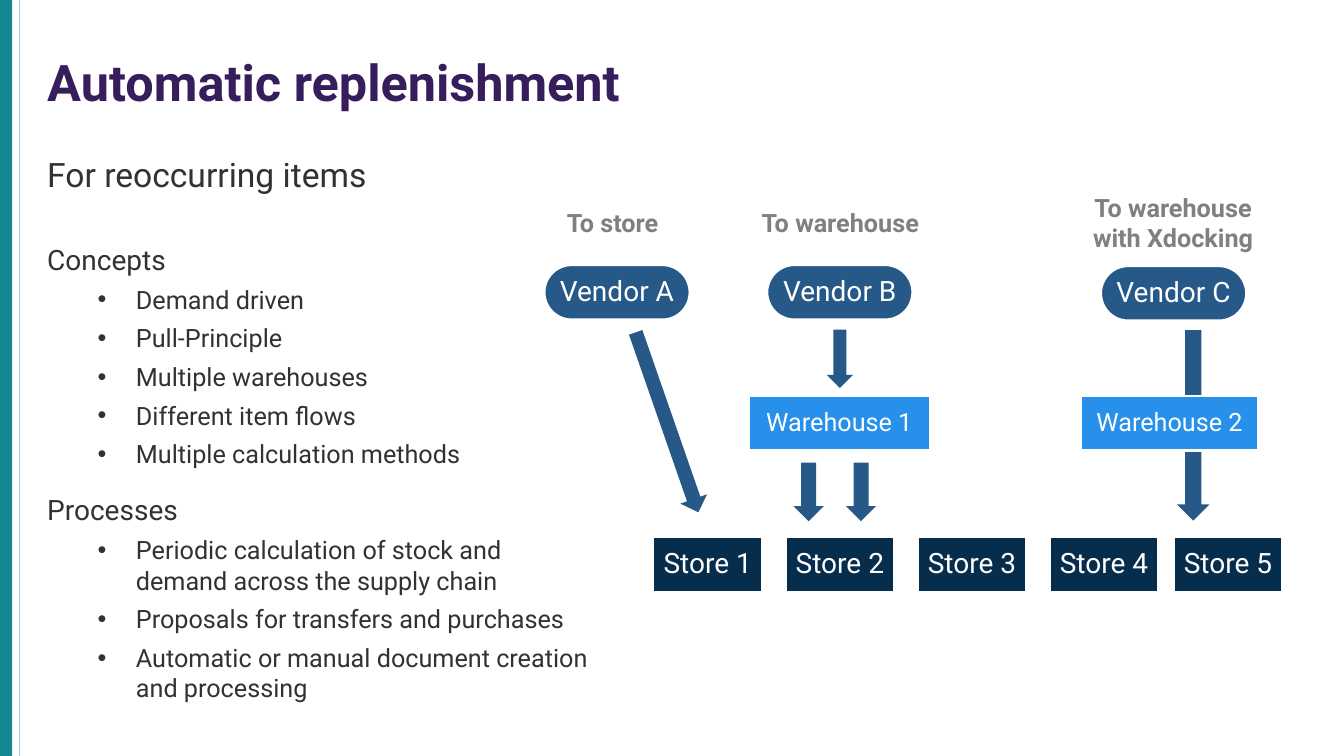
import pptx
import pptx.util
import pptx.dml.color
import pptx.enum.shapes
import pptx.enum.text
import lxml.etree

Inches = pptx.util.Inches
Pt = pptx.util.Pt
RGBColor = pptx.dml.color.RGBColor
SHAPE = pptx.enum.shapes.MSO_SHAPE
ALIGN = pptx.enum.text.PP_ALIGN
ANCHOR = pptx.enum.text.MSO_ANCHOR

FONT = "Roboto"
WHITE = RGBColor(0xFF, 0xFF, 0xFF)
TEAL = RGBColor(0x13, 0x88, 0x90)
PALE = RGBColor(0x8E, 0xD6, 0xE7)
PURPLE = RGBColor(0x36, 0x1D, 0x5C)
DARK = RGBColor(0x32, 0x31, 0x33)
GREY = RGBColor(0x80, 0x80, 0x80)
STEEL = RGBColor(0x26, 0x58, 0x88)
BLUE = RGBColor(0x26, 0x90, 0xEA)
NAVY = RGBColor(0x07, 0x2D, 0x4D)

TITLE = "Automatic replenishment"
INTRO = "For reoccurring items"
SECTIONS = [
    ("Concepts", ["Demand driven", "Pull-Principle", "Multiple warehouses",
                  "Different item flows", "Multiple calculation methods"]),
    ("Processes", ["Periodic calculation of stock and demand across the supply chain",
                   "Proposals for transfers and purchases",
                   "Automatic or manual document creation and processing"]),
]
LABELS = [
    (["To store"], 5.5, 2.01, 1.15, 0.4),
    (["To warehouse"], 7.42, 2.01, 1.83, 0.4),
    (["To warehouse", "with Xdocking"], 10.68, 1.86, 1.91, 0.71),
]
VENDORS = [("Vendor A", 5.4, 2.63), ("Vendor B", 7.61, 2.63), ("Vendor C", 10.92, 2.64)]
WAREHOUSES = [("Warehouse 1", 7.43, 1.79), ("Warehouse 2", 10.72, 1.76)]
STORE_LEFTS = [6.48, 7.79, 9.1, 10.41, 11.64]
CROSSDOCK_ARROW = (10.89, 4.06, 1.89, 0.32, 90)
ARROWS = [
    (5.67, 4.05, 1.89, 0.28, 70.8),
    (8.04, 3.43, 0.58, 0.26, 90),
    (7.73, 4.73, 0.58, 0.3, 90),
    (8.25, 4.73, 0.58, 0.3, 90),
]
BOX_H = 0.54

prs = pptx.Presentation()
prs.slide_width, prs.slide_height = Inches(13.33), Inches(7.5)
s = prs.slides.add_slide(prs.slide_layouts[6])


def add_run(p, text, size, color, bold=False):
    r = p.add_run()
    r.text = text
    r.font.name, r.font.size, r.font.bold = FONT, Pt(size), bold
    r.font.color.rgb = color


def add_shape(kind, x, y, w, h, fill, rotation=0):
    sp = s.shapes.add_shape(kind, Inches(x), Inches(y), Inches(w), Inches(h))
    sp.shadow.inherit = False
    sp.rotation = rotation
    sp.fill.solid()
    sp.fill.fore_color.rgb = fill
    sp.line.fill.background()
    return sp


def add_box(kind, text, x, y, w, fill, size):
    sp = add_shape(kind, x, y, w, BOX_H, fill)
    sp.line.color.rgb = WHITE
    sp.line.width = Pt(1.5)
    tf = sp.text_frame
    tf.word_wrap = True
    tf.vertical_anchor = ANCHOR.MIDDLE
    tf.margin_left = tf.margin_right = tf.margin_top = tf.margin_bottom = Inches(0.01)
    p = tf.paragraphs[0]
    p.alignment = ALIGN.CENTER
    p.line_spacing = 0.9
    add_run(p, text, size, WHITE)
    return sp


def add_text(x, y, w, h, wrap=True):
    tf = s.shapes.add_textbox(Inches(x), Inches(y), Inches(w), Inches(h)).text_frame
    tf.word_wrap = wrap
    return tf


def add_arrow(x, y, w, h, rotation):
    add_shape(SHAPE.RIGHT_ARROW, x, y, w, h, STEEL, rotation)


def make_bullet(p):
    pPr = p._p.get_or_add_pPr()
    pPr.set("marL", str(Inches(0.88)))
    pPr.set("indent", str(Inches(-0.38)))
    lxml.etree.SubElement(pPr, pptx.oxml.ns.qn("a:buFont"), typeface="Arial")
    lxml.etree.SubElement(pPr, pptx.oxml.ns.qn("a:buChar"), char="•")


add_shape(SHAPE.RECTANGLE, 0, 0, 0.12, 7.5, TEAL)
rule = s.shapes.add_connector(pptx.enum.shapes.MSO_CONNECTOR.STRAIGHT,
                              Inches(0.19), 0, Inches(0.19), Inches(7.5))
rule.line.color.rgb = PALE
rule.line.width = Pt(0.5)
lxml.etree.SubElement(rule._element.spPr, pptx.oxml.ns.qn("a:effectLst"))

tf = add_text(0.37, 0.53, 7.45, 0.64)
tf.vertical_anchor = ANCHOR.MIDDLE
tf.paragraphs[0].line_spacing = 0.9
add_run(tf.paragraphs[0], TITLE, 36, PURPLE, True)

tf = add_text(0.37, 1.48, 5.66, 5.43)
p = tf.paragraphs[0]
p.space_after = Pt(22)
add_run(p, INTRO, 24, DARK)
for heading, items in SECTIONS:
    p = tf.add_paragraph()
    p.space_before = Pt(12)
    add_run(p, heading, 20, DARK)
    for item in items:
        p = tf.add_paragraph()
        make_bullet(p)
        p.space_before = Pt(6)
        add_run(p, item, 18, DARK)
    p.space_after = Pt(5)

add_arrow(*CROSSDOCK_ARROW)
for text, x, y in VENDORS:
    sp = add_box(SHAPE.ROUNDED_RECTANGLE, text, x, y, 1.44, STEEL, 20)
    sp.adjustments[0] = 0.5
for text, x, w in WAREHOUSES:
    add_box(SHAPE.RECTANGLE, text, x, 3.93, w, BLUE, 18)
for number, x in enumerate(STORE_LEFTS, 1):
    add_box(SHAPE.RECTANGLE, f"Store {number}", x, 5.33, 1.08, NAVY, 20)

for lines, x, y, w, h in LABELS:
    p = add_text(x, y, w, h, wrap=False).paragraphs[0]
    p.alignment = ALIGN.CENTER
    for i, line in enumerate(lines):
        if i:
            p.add_line_break()
        add_run(p, line, 18, GREY, True)
for arrow in ARROWS:
    add_arrow(*arrow)

prs.save("out.pptx")
